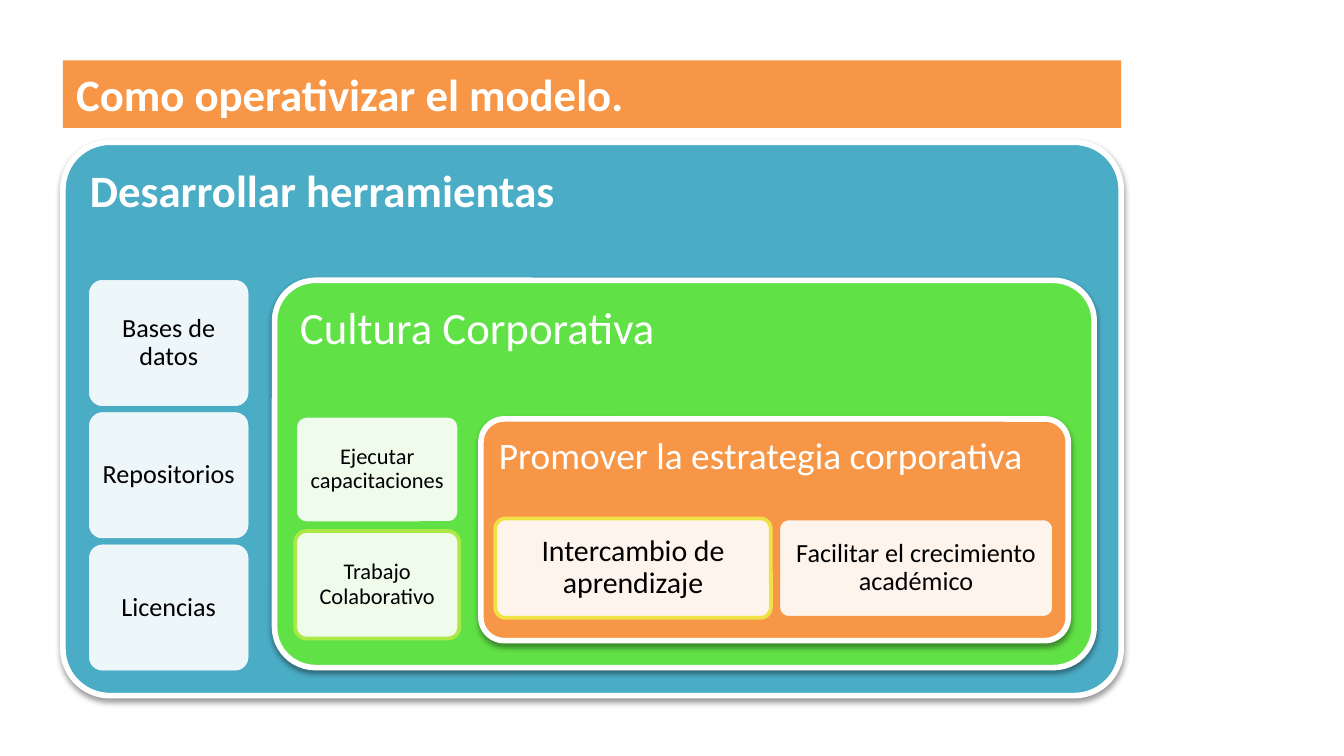
from lxml import etree
from pptx import Presentation, util as u
from pptx.dml.color import RGBColor
from pptx.enum import shapes, text
from pptx.oxml import ns

WHITE, BLACK, ORANGE, GREEN, TEAL = "FFFFFF", "000000", "F79646", "60E146", "4BACC6"


def add_block(kind, area, fill, line=None, width=0, corner=None):
    """Draw a filled shape; area is left, top, width, height in cm."""
    block = page.shapes.add_shape(kind, *map(u.Cm, area))
    block.shadow.inherit = False
    block.fill.solid()
    block.fill.fore_color.rgb = RGBColor.from_string(fill)
    if line:
        block.line.color.rgb = RGBColor.from_string(line)
        block.line.width = u.Pt(width)
    else:
        block.line.fill.background()
    if corner:
        block.adjustments[0] = corner
    return block


def write(box, words, size, color, side, top, bold=False, centred=False, spacing=0.9):
    """Put one paragraph in a box; side and top are its margins in cm."""
    frame = box.text_frame
    frame_format = {
        "word_wrap": True,
        "margin_left": u.Cm(side), "margin_right": u.Cm(side),
        "margin_top": u.Cm(top), "margin_bottom": u.Cm(top),
        "vertical_anchor": text.MSO_ANCHOR.MIDDLE if centred else text.MSO_ANCHOR.TOP,
    }
    for name, value in frame_format.items():
        setattr(frame, name, value)
    para = frame.paragraphs[0]
    para.alignment = text.PP_ALIGN.CENTER if centred else text.PP_ALIGN.LEFT
    para.line_spacing = spacing
    span = para.add_run()
    span.text = words
    span.font.color.rgb = RGBColor.from_string(color)
    for name, value in {"name": "Calibri", "size": u.Pt(size), "bold": bold}.items():
        setattr(span.font, name, value)


deck = Presentation()
deck.slide_width, deck.slide_height = u.Cm(25.4), u.Cm(14.29)
page = deck.slides.add_slide(deck.slide_layouts[6])
ROUND = shapes.MSO_SHAPE.ROUNDED_RECTANGLE

# Title bar
title = add_block(shapes.MSO_SHAPE.RECTANGLE, (1.19, 1.14, 20, 1.28), ORANGE)
write(title, "Como operativizar el modelo.", 24, WHITE, 0.25, 0.13, bold=True, spacing=1)

# Nested panels, outermost first; cards are words, text size, outline, outline width
panels = [
    {"words": "Desarrollar herramientas", "size": 24, "bold": True, "fill": TEAL,
     "area": (1.19, 2.69, 20, 10.46), "corner": 0.085, "inset": 0.25, "margin": 0.26,
     "first": (1.69, 5.3, 3, 2.37), "step": (0, 2.5), "pad": 0.15,
     "cards": [("Bases de datos", 14, WHITE, 0.25),
               ("Repositorios", 14, WHITE, 0.25),
               ("Licencias", 14, WHITE, 0.25)]},
    {"words": "Cultura Corporativa", "size": 24, "bold": False, "fill": GREEN,
     "area": (5.19, 5.3, 15.49, 7.32), "corner": 0.105, "inset": 0.22, "margin": 0.26,
     "first": (5.58, 7.86, 3.1, 2.03), "step": (0, 2.18), "pad": 0.13,
     "cards": [("Ejecutar capacitaciones", 12, GREEN, 2),
               ("Trabajo Colaborativo", 12, "ACE946", 2)]},
    {"words": "Promover la estrategia corporativa", "size": 20, "bold": False, "fill": ORANGE,
     "area": (9.09, 7.92, 11.1, 4.19), "corner": 0.105, "inset": 0.13, "margin": 0.21,
     "first": (9.36, 9.8, 5.21, 1.88), "step": (5.35, 0), "pad": 0.16,
     "cards": [("Intercambio de aprendizaje", 16, "F0E146", 2),
               ("Facilitar el crecimiento académico", 14, ORANGE, 2)]},
]
CARD_INSET = 0.06

for panel in panels:
    # Panel with a soft shadow below it
    block = add_block(ROUND, panel["area"], panel["fill"], WHITE, 3, panel["corner"])
    effects = block.element.spPr.find(ns.qn("a:effectLst"))
    shadow = etree.SubElement(effects, ns.qn("a:outerShdw"), blurRad=str(u.Pt(3.1)),
                              dist=str(u.Pt(1.6)), dir="5400000", rotWithShape="0")
    shade = etree.SubElement(shadow, ns.qn("a:srgbClr"), val=BLACK)
    etree.SubElement(shade, ns.qn("a:alpha"), val="38000")

    # Panel heading
    left, top, width, height = panel["area"]
    inset, margin = panel["inset"], panel["margin"]
    box = page.shapes.add_textbox(u.Cm(left + inset), u.Cm(top + inset),
                                  u.Cm(width - 2 * inset), u.Cm(height - 2 * inset))
    write(box, panel["words"], panel["size"], WHITE, margin, margin, bold=panel["bold"])

    # Translucent cards
    left, top, width, height = panel["first"]
    across, down = panel["step"]
    for index, (words, size, line, line_width) in enumerate(panel["cards"]):
        x, y = left + index * across, top + index * down
        card = add_block(ROUND, (x, y, width, height), WHITE, line, line_width, 0.105)
        fill_color = card.element.spPr.find(ns.qn("a:solidFill"))[0]
        etree.SubElement(fill_color, ns.qn("a:alpha"), val="90000")
        box = page.shapes.add_textbox(u.Cm(x + CARD_INSET), u.Cm(y + CARD_INSET),
                                      u.Cm(width - 2 * CARD_INSET),
                                      u.Cm(height - 2 * CARD_INSET))
        write(box, words, size, BLACK, panel["pad"], panel["pad"], centred=True)

deck.save("out.pptx")
